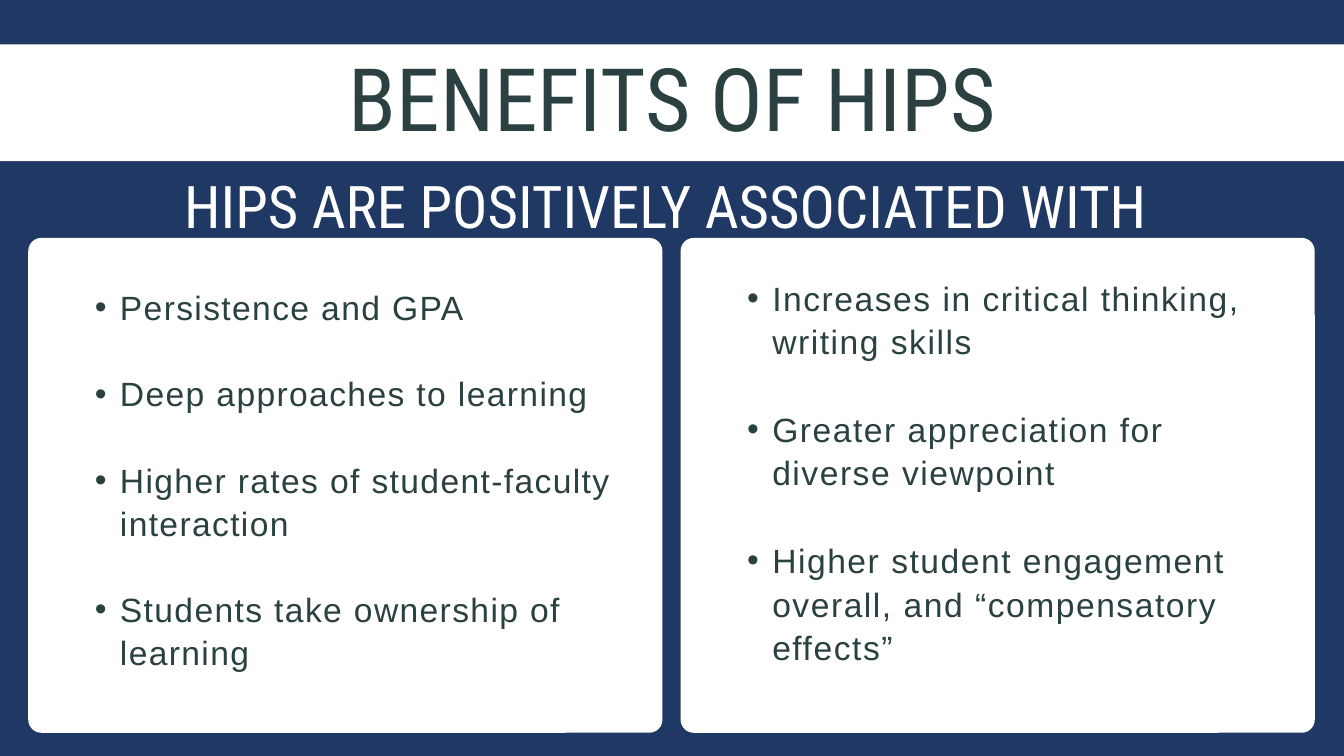
from lxml import etree
from pptx import Presentation
from pptx.dml.color import RGBColor
from pptx.enum.shapes import MSO_SHAPE
from pptx.enum.text import MSO_ANCHOR, MSO_AUTO_SIZE, PP_ALIGN
from pptx.oxml.ns import qn
from pptx.util import Inches, Pt

RECT, ROUNDED = MSO_SHAPE.RECTANGLE, MSO_SHAPE.ROUNDED_RECTANGLE
CENTER, LEFT = PP_ALIGN.CENTER, PP_ALIGN.LEFT
TOP, NO_FIT = MSO_ANCHOR.TOP, MSO_AUTO_SIZE.NONE
NAVY, WHITE, INK = "203864", "FFFFFF", "2B4141"
HEADING, BODY = "Roboto Condensed", "Arial"


def paint(fill, color):
    fill.solid()
    fill.fore_color.rgb = RGBColor.from_string(color)


def write(sp, box, lines, font, size, color, leading, align):
    sp.left, sp.top, sp.width, sp.height = [Inches(v) for v in box]
    tf = sp.text_frame
    tf.text = "\n".join(lines)
    tf.word_wrap = True
    tf.auto_size = NO_FIT
    tf.vertical_anchor = TOP
    tf.margin_left = tf.margin_top = tf.margin_right = tf.margin_bottom = 0
    for p in tf.paragraphs:
        p.alignment = align
        p.line_spacing = Pt(leading)
        f = p.runs[0].font
        f.name, f.size = font, Pt(size)
        paint(f.fill, color)
    return tf


prs = Presentation()
prs.slide_width, prs.slide_height = Inches(13.33), Inches(7.5)
s = prs.slides.add_slide(prs.slide_layouts[5])
paint(s.background.fill, NAVY)

panels = [
    (RECT, 0, 0.44, 13.33, 1.16),
    (ROUNDED, 0.28, 2.36, 6.29, 4.91),
    (ROUNDED, 6.75, 2.36, 6.29, 4.91),
]
for kind, *box in panels:
    sp = s.shapes.add_shape(kind, *[Inches(v) for v in box])
    sp.shadow.inherit = False
    paint(sp.fill, WHITE)
    sp.line.fill.background()
    if kind == ROUNDED:
        sp.adjustments[0] = 0.13 / 4.91

title = s.shapes.title
title.element.getparent().append(title.element)
write(title, (3.45, 0.66, 6.44, 0.83), ["BENEFITS OF HIPS"],
      HEADING, 62.5, INK, 58.7, CENTER)

subtitle = s.shapes.add_textbox(0, 0, 0, 0)
write(subtitle, (1.39, 1.57, 10.42, 0.74), ["HIPS ARE POSITIVELY ASSOCIATED WITH"],
      HEADING, 42, WHITE, 58.8, CENTER)

columns = [
    ((0.7, 2.82, 5.44, 4.31), 30.8, 0.49, 100, [
        "Persistence and GPA",
        "Deep approaches to learning",
        "Higher rates of student‐faculty interaction",
        "Students take ownership of learning",
    ]),
    ((7.16, 2.72, 5.45, 4.31), 31.2, 0.5, 110, [
        "Increases in critical thinking, writing skills",
        "Greater appreciation for diverse viewpoint",
        "Higher student engagement overall, and “compensatory effects”",
    ]),
]
for box, leading, indent, tracking, lines in columns:
    sp = s.shapes.add_textbox(0, 0, 0, 0)
    tf = write(sp, box, lines, BODY, 24, INK, leading, LEFT)
    for i, p in enumerate(tf.paragraphs):
        p.space_before = Pt(leading if i else 0)
        pPr = p._p.get_or_add_pPr()
        pPr.set("marL", str(Inches(indent)))
        pPr.set("indent", str(Inches(-0.25)))
        etree.SubElement(pPr, qn("a:buFont")).set("typeface", BODY)
        etree.SubElement(pPr, qn("a:buChar")).set("char", "•")
        p.runs[0]._r.get_or_add_rPr().set("spc", str(tracking))

prs.save("out.pptx")
